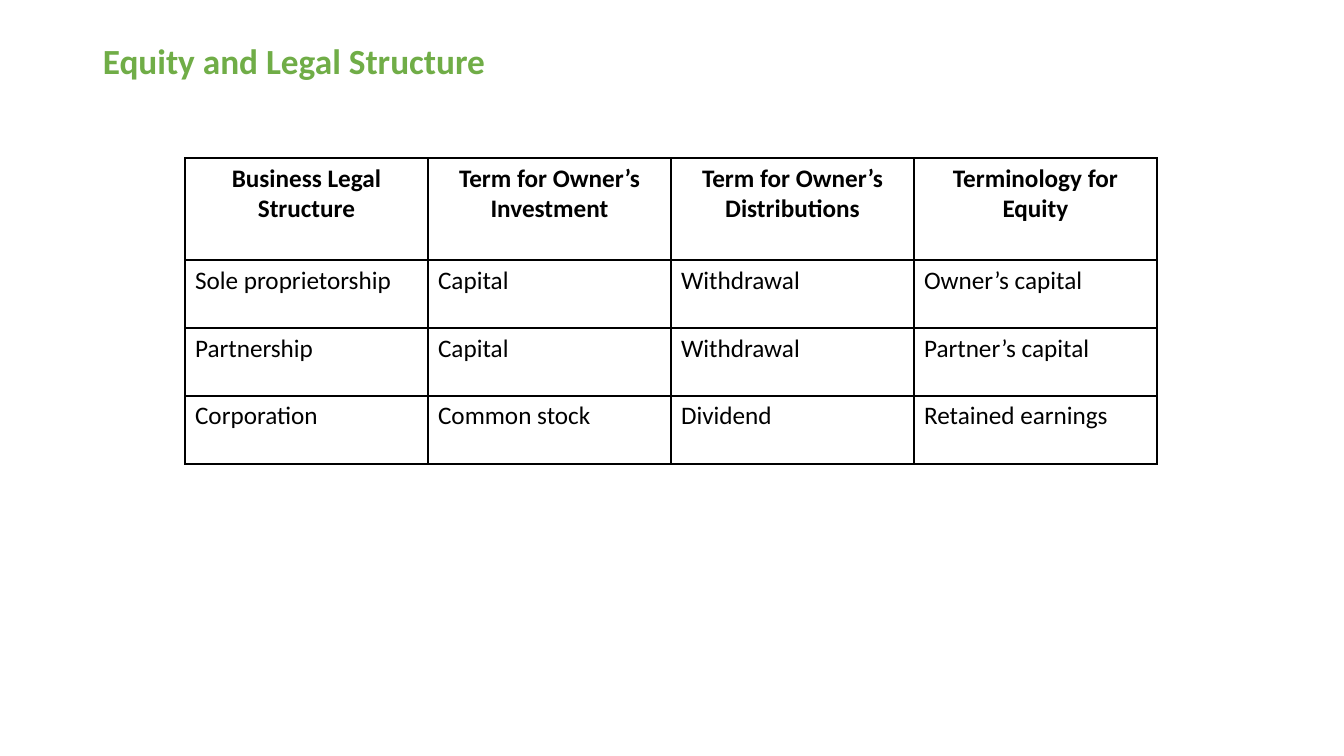
"""Build a slide with a table of equity terms by legal structure."""
from lxml import etree
from pptx import Presentation
from pptx.dml.color import RGBColor
from pptx.enum.text import MSO_ANCHOR, PP_ALIGN
from pptx.oxml.ns import qn
from pptx.util import Pt

CENTER, LEFT = PP_ALIGN.CENTER, PP_ALIGN.LEFT
MIDDLE = MSO_ANCHOR.MIDDLE

TITLE = "Equity and Legal Structure"
ROWS = [
    ("Business Legal Structure", "Term for Owner’s Investment",
     "Term for Owner’s Distributions", "Terminology for Equity"),
    ("Sole proprietorship", "Capital", "Withdrawal", "Owner’s capital"),
    ("Partnership", "Capital", "Withdrawal", "Partner’s capital"),
    ("Corporation", "Common stock", "Dividend", "Retained earnings"),
]

FONT = "Calibri"
GREEN, BLACK = "70AD47", "000000"
SLIDE_WIDTH, SLIDE_HEIGHT = 1344, 756
TITLE_BOX = (93, 40, 1159, 46)
TABLE_LEFT, TABLE_TOP = 185, 158
COLUMN_WIDTH, HEADER_HEIGHT, BODY_HEIGHT = 243, 102, 68


def px(length):
    return round(length * 914400 / 100.8)


def color(value):
    return RGBColor.from_string(value)


def add_run(paragraph, text, size, value, bold):
    run = paragraph.add_run()
    run.text = text
    run.font.name = FONT
    run.font.size = Pt(size)
    run.font.bold = bold
    run.font.color.rgb = color(value)


def add_borders(cell):
    properties = cell._tc.get_or_add_tcPr()
    for position, side in enumerate(("lnL", "lnR", "lnT", "lnB")):
        line = etree.Element(qn(f"a:{side}"), w=str(Pt(1)))
        fill = etree.SubElement(line, qn("a:solidFill"))
        etree.SubElement(fill, qn("a:srgbClr"), val=BLACK)
        properties.insert(position, line)


def add_title(slide):
    frame = slide.shapes.add_textbox(*map(px, TITLE_BOX)).text_frame
    frame.word_wrap = True
    frame.vertical_anchor = MIDDLE
    paragraph = frame.paragraphs[0]
    paragraph.line_spacing = 0.9
    add_run(paragraph, TITLE, 25.2, GREEN, True)


def add_terms_table(slide):
    heights = [HEADER_HEIGHT] + [BODY_HEIGHT] * (len(ROWS) - 1)
    columns = len(ROWS[0])
    table = slide.shapes.add_table(
        len(ROWS), columns, px(TABLE_LEFT), px(TABLE_TOP),
        px(COLUMN_WIDTH * columns), px(sum(heights))).table
    table.horz_banding = False
    for column in table.columns:
        column.width = px(COLUMN_WIDTH)
    for row_index, texts in enumerate(ROWS):
        table.rows[row_index].height = px(heights[row_index])
        is_header = row_index == 0
        for column_index, text in enumerate(texts):
            cell = table.cell(row_index, column_index)
            cell.fill.background()
            add_borders(cell)
            paragraph = cell.text_frame.paragraphs[0]
            paragraph.alignment = CENTER if is_header else LEFT
            add_run(paragraph, text, 18, BLACK, is_header)


def main():
    presentation = Presentation()
    presentation.slide_width = px(SLIDE_WIDTH)
    presentation.slide_height = px(SLIDE_HEIGHT)
    slide = presentation.slides.add_slide(presentation.slide_layouts[6])
    add_terms_table(slide)
    add_title(slide)
    presentation.save("out.pptx")


if __name__ == "__main__":
    main()
